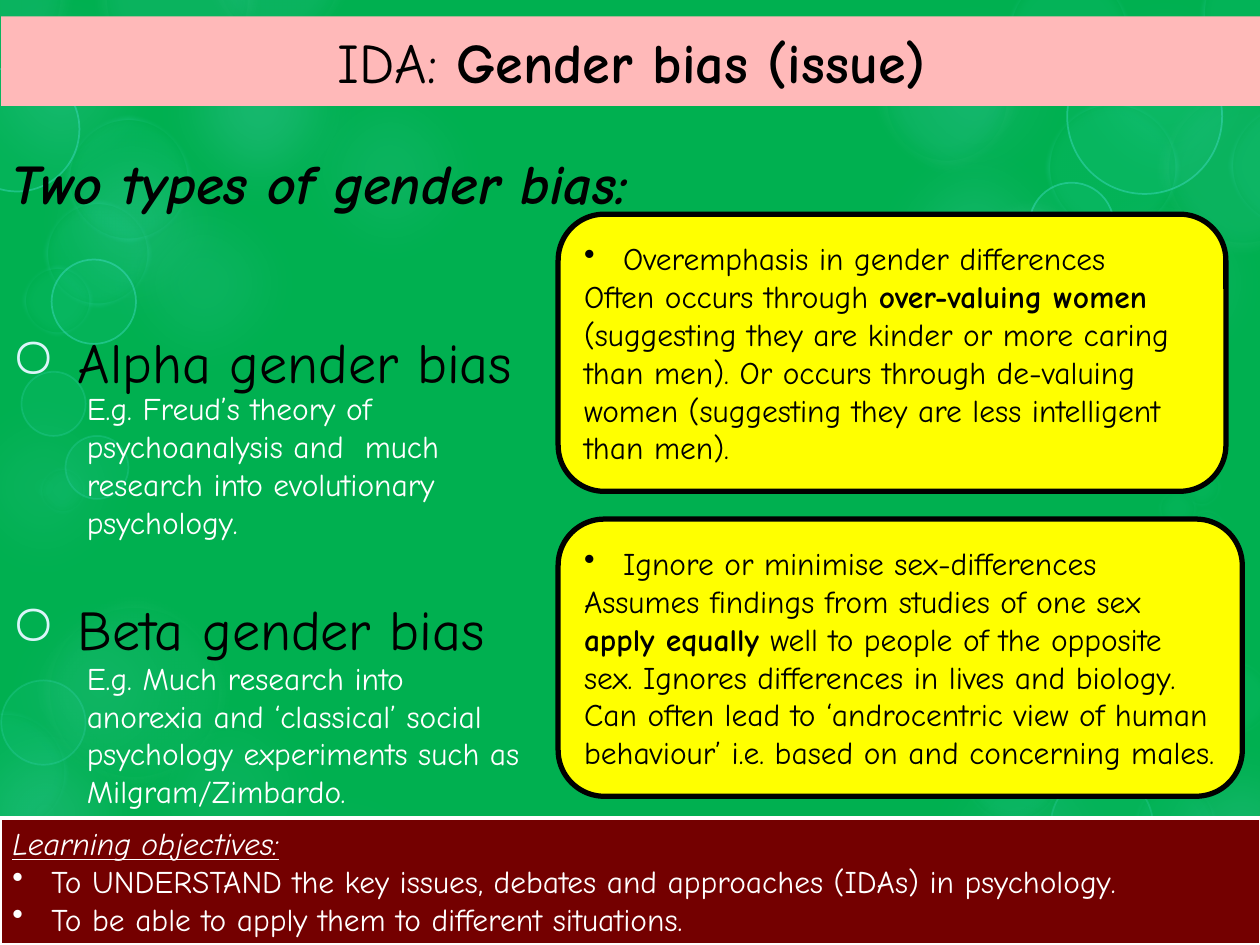
import dataclasses

import lxml.etree
import pptx
import pptx.dml.color
import pptx.enum.shapes
import pptx.enum.text
import pptx.oxml.ns
import pptx.util

RGBColor = pptx.dml.color.RGBColor
MSO_SHAPE = pptx.enum.shapes.MSO_SHAPE
MSO_ANCHOR = pptx.enum.text.MSO_ANCHOR
PP_ALIGN = pptx.enum.text.PP_ALIGN
qn = pptx.oxml.ns.qn

EMU_PER_PX = 9144
FONT = "Comic Neue"
GREEN = RGBColor(0x00, 0xB0, 0x50)
PINK = RGBColor(0xFF, 0xB9, 0xB9)
MAROON = RGBColor(0x74, 0x00, 0x00)
YELLOW = RGBColor(0xFF, 0xFF, 0x00)
BLACK = RGBColor(0x00, 0x00, 0x00)
WHITE = RGBColor(0xFF, 0xFF, 0xFF)
BULLET_BLUE = RGBColor(0xDB, 0xF5, 0xF9)
MIST = RGBColor(0x77, 0xD9, 0xE8)
AQUA = RGBColor(0x5E, 0xF0, 0xF7)
FROST = RGBColor(0xE9, 0xF9, 0xFB)


@dataclasses.dataclass(frozen=True)
class Box:
    left: int
    top: int
    width: int
    height: int


@dataclasses.dataclass(frozen=True)
class BubbleStyle:
    fill: RGBColor
    opacity: int
    soft_edge: int = 0
    line: RGBColor | None = None
    line_width: int = 0
    line_opacity: int = 0


@dataclasses.dataclass(frozen=True)
class Run:
    text: str
    bold: bool = False
    italic: bool = False
    underline: bool = False


@dataclasses.dataclass(frozen=True)
class Paragraph:
    runs: tuple[Run, ...]
    bullet: str = ""
    indent: int = 31
    bullet_color: RGBColor | None = None
    space_before: int = 0
    align: PP_ALIGN = PP_ALIGN.LEFT


def mist(opacity: int) -> BubbleStyle:
    return BubbleStyle(MIST, opacity, 32)


def frost(opacity: int, line_opacity: int) -> BubbleStyle:
    return BubbleStyle(MIST, opacity, 12, FROST, 14, line_opacity)


def aqua(line_width: int, line_opacity: int) -> BubbleStyle:
    soft_edge = 5 if line_width > 1 else 0
    return BubbleStyle(AQUA, 5, soft_edge, AQUA, line_width, line_opacity)


BUBBLES = (
    (mist(8), ((-26, 442, 209), (77, 524, 209), (173, 596, 209), (-70, 282, 209))),
    (mist(10), ((57, 120, 209), (205, 31, 209), (669, -29, 209), (706, 562, 209), (675, 262, 133))),
    (mist(16), ((57, 627, 209), (881, 562, 209), (-69, 541, 209))),
    (mist(14), ((-56, -32, 209),)),
    (mist(20), ((101, -18, 209),)),
    (mist(15), ((0, 72, 209), (820, 120, 209), (669, 86, 209))),
    (mist(5), ((729, 477, 209),)),
    (BubbleStyle(AQUA, 10, 32), ((820, -32, 209),)),
    (frost(10, 6), ((918, 65, 137), (694, 23, 114), (752, 159, 133), (75, -66, 131),
                    (164, -75, 114), (-57, -58, 114))),
    (frost(6, 4), ((30, 473, 153), (632, 710, 124), (670, 701, 136), (828, 701, 134))),
    (aqua(1, 15), ((1, 540, 67), (834, 614, 81), (17, 295, 51), (52, 346, 50))),
    (aqua(5, 15), ((-36, 675, 113), (-44, 564, 98), (763, 573, 81), (900, 620, 66), (950, 524, 60),
                   (937, 370, 33), (918, 387, 33), (941, 403, 33), (30, 370, 39))),
    (aqua(1, 30), ((-36, 53, 99), (41, 206, 67), (847, 31, 123), (817, 145, 67))),
    (aqua(5, 30), ((52, 92, 100), (35, 159, 85), (17, 210, 57), (799, -23, 98), (953, -40, 100),
                   (975, 82, 99), (830, 80, 106))),
)

TITLE = (Paragraph((Run("IDA: "), Run("Gender bias (issue)", bold=True)), align=PP_ALIGN.CENTER),)
TYPES = (
    Paragraph((Run("Two types of gender bias:", bold=True, italic=True),)),
    Paragraph((Run(" Alpha gender bias"),), "○", 38, BULLET_BLUE, 64),
    Paragraph((Run(" Beta gender bias"),), "○", 38, BULLET_BLUE, 114),
)
OBJECTIVES = (
    Paragraph((Run("Learning objectives:", italic=True, underline=True),)),
    Paragraph((Run("To UNDERSTAND the key issues, debates and approaches (IDAs) in psychology."),), "•"),
    Paragraph((Run("To be able to apply them to different situations."),), "•"),
)
DEFINITIONS = (
    (Box(443, 170, 530, 220), (
        Paragraph((Run("Overemphasis in gender differences"),), "•"),
        Paragraph((
            Run("Often occurs through "),
            Run("over-valuing women ", bold=True),
            Run("(suggesting they are kinder or more caring than men). Or occurs through de-valuing "
                "women (suggesting they are less intelligent than men)."),
        )),
    )),
    (Box(443, 412, 543, 220), (
        Paragraph((Run("Ignore or minimise sex-differences"),), "•"),
        Paragraph((
            Run("Assumes findings from studies of one sex "),
            Run("apply equally ", bold=True),
            Run("well to people of the opposite sex. Ignores differences in lives and biology. Can often "
                "lead to ‘androcentric view of human behaviour’ i.e. based on and concerning males."),
        )),
    )),
)
EXAMPLES = (
    (304, "E.g. Freud’s theory of psychoanalysis and  much research into evolutionary psychology."),
    (518, "E.g. Much research into anorexia and ‘classical’ social psychology experiments such as "
          "Milgram/Zimbardo."),
)


def px(length: int) -> pptx.util.Emu:
    return pptx.util.Emu(length * EMU_PER_PX)


def place(box: Box) -> tuple[pptx.util.Emu, ...]:
    return tuple(px(length) for length in dataclasses.astuple(box))


def set_opacity(parent, percent: int) -> None:
    for color in parent.iter(qn("a:srgbClr")):
        lxml.etree.SubElement(color, qn("a:alpha"), val=str(percent * 1000))


def add_panel(slide, preset, box: Box, fill: RGBColor, line: RGBColor | None = None, line_width: int = 0):
    shape = slide.shapes.add_shape(preset, *place(box))
    shape.shadow.inherit = False
    shape.fill.solid()
    shape.fill.fore_color.rgb = fill
    if line is None:
        shape.line.fill.background()
    else:
        shape.line.color.rgb = line
        shape.line.width = pptx.util.Pt(line_width)
    return shape


def add_bubble(slide, style: BubbleStyle, left: int, top: int, diameter: int) -> None:
    box = Box(left, top, diameter, diameter)
    shape = add_panel(slide, MSO_SHAPE.OVAL, box, style.fill, style.line, style.line_width)
    properties = shape._element.spPr
    set_opacity(properties.find(qn("a:solidFill")), style.opacity)
    set_opacity(properties.find(qn("a:ln")), style.line_opacity)
    if style.soft_edge:
        radius = str(pptx.util.Pt(style.soft_edge))
        lxml.etree.SubElement(properties.find(qn("a:effectLst")), qn("a:softEdge"), rad=radius)


def add_text(paragraph, text: str, *, size: int, color: RGBColor, bold: bool = False,
             italic: bool = False, underline: bool = False) -> None:
    run = paragraph.add_run()
    run.text = text
    font = run.font
    font.name, font.size, font.color.rgb = FONT, pptx.util.Pt(size), color
    font.bold, font.italic, font.underline = bold, italic, underline


def add_bullet(paragraph, content: Paragraph) -> None:
    properties = paragraph._p.get_or_add_pPr()
    properties.set("marL", str(px(content.indent)))
    properties.set("indent", str(-px(content.indent)))
    if content.bullet_color is not None:
        color = lxml.etree.SubElement(properties, qn("a:buClr"))
        lxml.etree.SubElement(color, qn("a:srgbClr"), val=str(content.bullet_color))
    lxml.etree.SubElement(properties, qn("a:buChar"), char=content.bullet)


def write(shape, paragraphs: tuple[Paragraph, ...], size: int, color: RGBColor, anchor=MSO_ANCHOR.TOP) -> None:
    frame = shape.text_frame
    frame.word_wrap = True
    frame.vertical_anchor = anchor
    for index, content in enumerate(paragraphs):
        paragraph = frame.add_paragraph() if index else frame.paragraphs[0]
        paragraph.alignment = content.align
        paragraph.space_before = pptx.util.Pt(content.space_before)
        if content.bullet:
            add_bullet(paragraph, content)
        for run in content.runs:
            add_text(paragraph, size=size, color=color, **dataclasses.asdict(run))


def main() -> None:
    """Build the gender bias slide and save it."""
    presentation = pptx.Presentation()
    presentation.slide_width, presentation.slide_height = px(1000), px(750)
    slide = presentation.slides.add_slide(presentation.slide_layouts[5])
    slide.background.fill.solid()
    slide.background.fill.fore_color.rgb = GREEN
    for style, circles in BUBBLES:
        for circle in circles:
            add_bubble(slide, style, *circle)

    title = slide.shapes.title
    title._element.getparent().append(title._element)
    title.left, title.top, title.width, title.height = place(Box(1, 13, 1001, 71))
    title.fill.solid()
    title.fill.fore_color.rgb = PINK
    write(title, TITLE, 32, BLACK, MSO_ANCHOR.MIDDLE)

    types = slide.shapes.add_textbox(*place(Box(-1, 90, 987, 526)))
    types.text_frame.margin_top = px(28)
    write(types, TYPES, 32, BLACK)

    objectives = add_panel(slide, MSO_SHAPE.RECTANGLE, Box(0, 649, 1001, 101), MAROON, WHITE, 2)
    write(objectives, OBJECTIVES, 18, WHITE)
    for box, paragraphs in DEFINITIONS:
        definition = add_panel(slide, MSO_SHAPE.ROUNDED_RECTANGLE, box, YELLOW, BLACK, 3)
        write(definition, paragraphs, 18, BLACK, MSO_ANCHOR.MIDDLE)
    for top, text in EXAMPLES:
        example = slide.shapes.add_textbox(*place(Box(59, top, 368, 131)))
        write(example, (Paragraph((Run(text),)),), 18, WHITE)
    presentation.save("out.pptx")


if __name__ == "__main__":
    main()
